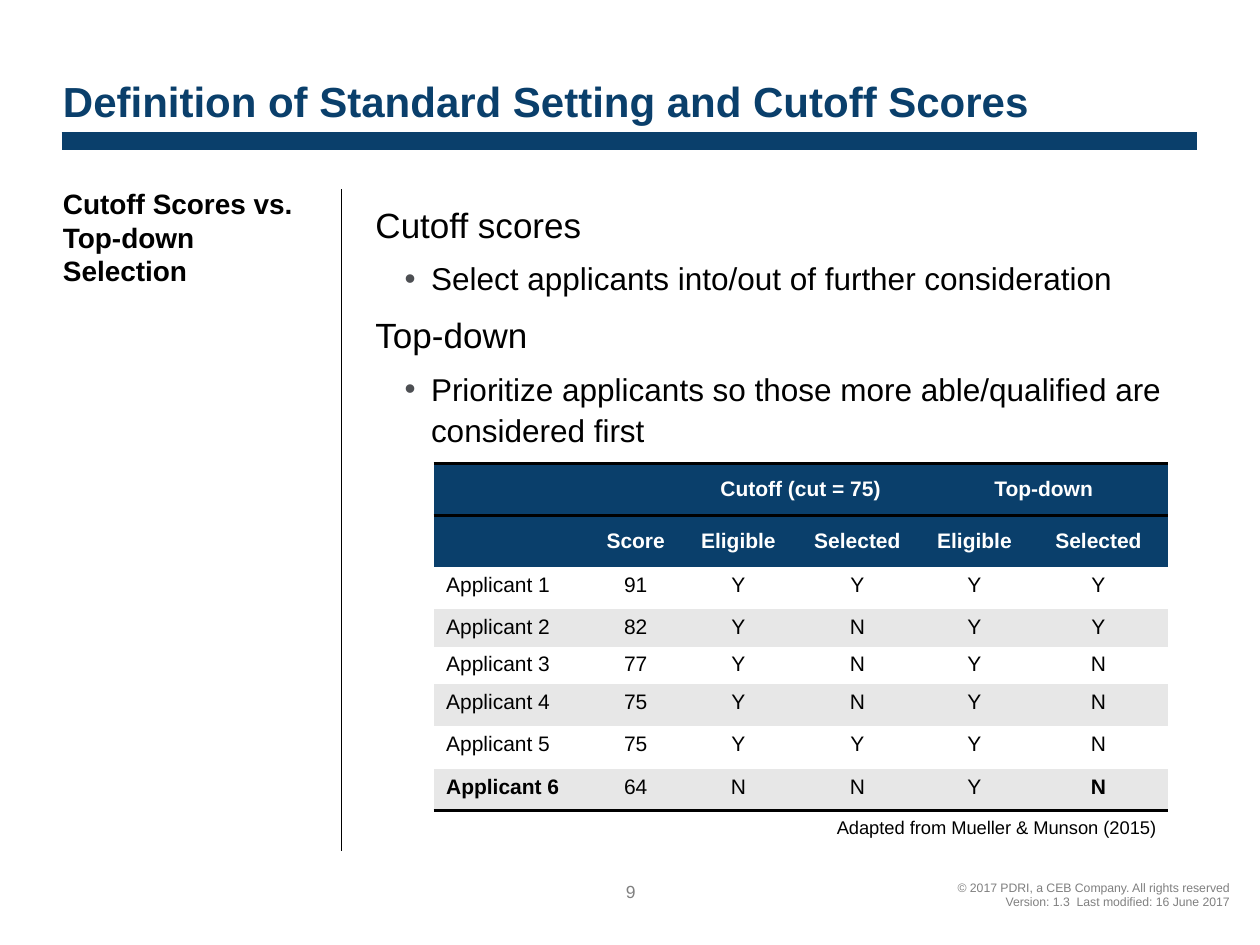
from dataclasses import dataclass

from lxml.etree import SubElement
from pptx import Presentation
from pptx.dml.color import RGBColor
from pptx.enum.shapes import MSO_CONNECTOR as Connector
from pptx.enum.text import MSO_ANCHOR as Anchor, PP_ALIGN as Align
from pptx.oxml.ns import qn
from pptx.util import Cm, Pt


@dataclass(frozen=True)
class Theme:
    font: str = "Arial"
    navy: str = "0A3F6B"
    black: str = "000000"
    white: str = "FFFFFF"
    band: str = "E7E7E7"
    grey: str = "7F7F7F"
    footer_grey: str = "808080"
    bullet: str = "4D4F53"
    title: float = 24
    topic: float = 20
    point: float = 18
    sidebar: float = 16
    cell: float = 12
    source: float = 10.5
    number: float = 10
    footer: float = 7


THEME = Theme()
NO_TABLE_STYLE = "{2D5ABB26-0587-4C30-8999-92F81FD0307C}"

DISCUSSION = [
    ("Cutoff scores", "Select applicants into/out of further consideration"),
    ("Top-down", "Prioritize applicants so those more able/qualified are considered first"),
]
GROUPS = ["", "", "Cutoff (cut = 75)", "", "Top-down", ""]
HEADINGS = ["", "Score", "Eligible", "Selected", "Eligible", "Selected"]
APPLICANTS = [(91, "YYYY"), (82, "YNYY"), (77, "YNYN"),
              (75, "YNYN"), (75, "YYYN"), (64, "NNYN")]
COLUMN_WIDTHS = [3.15, 1.85, 2.29, 2.51, 2.21, 2.79]
ROW_HEIGHTS = [1.04, 1.04, 0.84, 0.69, 0.71, 0.84, 0.86, 0.84]


def apply_format(target, values):
    for name, value in values.items():
        setattr(target, name, value)


def write(paragraph, text, size, color=THEME.black, bold=False, **layout):
    run = paragraph.add_run()
    run.text = text
    apply_format(run.font, {"name": THEME.font, "size": Pt(size), "bold": bold})
    run.font.color.rgb = RGBColor.from_string(color)
    apply_format(paragraph, layout)


def add_frame(slide, left, top, width, height, insets=(0, 0, 0, 0), anchor=Anchor.TOP):
    box = slide.shapes.add_textbox(Cm(left), Cm(top), Cm(width), Cm(height))
    frame = box.text_frame
    apply_format(frame, {"word_wrap": True, "vertical_anchor": anchor})
    sides = ("margin_left", "margin_top", "margin_right", "margin_bottom")
    apply_format(frame, dict(zip(sides, map(Cm, insets))))
    return frame


def add_rule(slide, start, end, color, weight):
    rule = slide.shapes.add_connector(Connector.STRAIGHT, *map(Cm, start + end))
    rule.line.color.rgb = RGBColor.from_string(color)
    rule.line.width = Pt(weight)
    SubElement(rule._element.spPr, qn("a:effectLst"))


def add_bullet(paragraph):
    properties = paragraph._p.get_or_add_pPr()
    apply_indent = {"marL": Cm(1.12), "indent": Cm(-0.53), "lvl": 1}
    for name, value in apply_indent.items():
        properties.set(name, str(value))
    color = SubElement(properties, qn("a:buClr"))
    SubElement(color, qn("a:srgbClr"), val=THEME.bullet)
    SubElement(properties, qn("a:buFont"), typeface=THEME.font)
    SubElement(properties, qn("a:buChar"), char="•")


def add_discussion(slide):
    frame = add_frame(slide, 7.57, 4.01, 16.54, 13.14)
    for index, (topic, point) in enumerate(DISCUSSION):
        heading = frame.add_paragraph() if index else frame.paragraphs[0]
        write(heading, topic, THEME.topic, line_spacing=1.1,
              space_before=Pt(7 if index else 0))
        detail = frame.add_paragraph()
        add_bullet(detail)
        write(detail, point, THEME.point, line_spacing=1.1, space_before=Pt(6))


def add_border(cell, side):
    border = SubElement(cell._tc.get_or_add_tcPr(), qn(f"a:ln{side}"), w=str(Pt(2)))
    fill = SubElement(border, qn("a:solidFill"))
    SubElement(fill, qn("a:srgbClr"), val=THEME.black)


def fill_cell(cell, text, row, column, last_row):
    header = row < 2
    borders = {0: "TB", last_row: "B"}.get(row, "")
    for side in borders:
        add_border(cell, side)
    cell.fill.solid()
    background = THEME.navy if header else (THEME.band if row % 2 else THEME.white)
    cell.fill.fore_color.rgb = RGBColor.from_string(background)
    cell.vertical_anchor = Anchor.MIDDLE if header else Anchor.TOP
    if text:
        write(cell.text_frame.paragraphs[0], text, THEME.cell,
              THEME.white if header else THEME.black,
              header or (row == last_row and column in (0, 5)),
              alignment=Align.CENTER if header or column else Align.LEFT)


def add_comparison(slide):
    records = [GROUPS, HEADINGS] + [
        [f"Applicant {number}", str(score), *decisions]
        for number, (score, decisions) in enumerate(APPLICANTS, 1)
    ]
    frame = slide.shapes.add_table(
        len(records), len(HEADINGS), Cm(8.74), Cm(9.35),
        Cm(sum(COLUMN_WIDTHS)), Cm(sum(ROW_HEIGHTS)))
    table = frame.table
    table._tbl.tblPr.find(qn("a:tableStyleId")).text = NO_TABLE_STYLE
    for column, width in zip(table.columns, COLUMN_WIDTHS):
        column.width = Cm(width)
    for row, height in zip(table.rows, ROW_HEIGHTS):
        row.height = Cm(height)
    for row, record in enumerate(records):
        for column, text in enumerate(record):
            fill_cell(table.cell(row, column), text, row, column, len(records) - 1)
    for column in (2, 4):
        table.cell(0, column).merge(table.cell(0, column + 1))


def add_footer(slide):
    footer = add_frame(slide, 10.82, 17.75, 13.97, 0.58, anchor=Anchor.BOTTOM)
    write(footer.paragraphs[0], "© 2017 PDRI, a CEB Company. All rights reserved",
          THEME.footer, THEME.grey, alignment=Align.RIGHT, line_spacing=Pt(8))
    write(footer.add_paragraph(), "Version: 1.3\u00a0 Last modified: 16 June 2017",
          THEME.footer, THEME.footer_grey, alignment=Align.RIGHT)
    number = add_frame(slide, 12.22, 17.86, 0.99, 0.38)
    write(number.paragraphs[0], "9", THEME.number, THEME.grey,
          alignment=Align.CENTER, line_spacing=Pt(9))


def main():
    deck = Presentation()
    apply_format(deck, {"slide_width": Cm(25.4), "slide_height": Cm(19.05)})
    slide = deck.slides.add_slide(deck.slide_layouts[6])
    add_footer(slide)
    add_rule(slide, (6.88, 3.81), (6.88, 17.15), THEME.black, 0.5)
    add_rule(slide, (1.24, 2.84), (24.13, 2.84), THEME.navy, 10.25)
    sidebar = add_frame(slide, 1.27, 3.76, 4.88, 4.17, (0, 0, 0, 0.13))
    write(sidebar.paragraphs[0], "Cutoff Scores vs. Top-down Selection",
          THEME.sidebar, bold=True)
    add_discussion(slide)
    title = add_frame(slide, 1.27, 1.02, 22.86, 1.65, (0, 0.13, 0.25, 0.13), Anchor.BOTTOM)
    write(title.paragraphs[0], "Definition of Standard Setting and Cutoff Scores",
          THEME.title, THEME.navy, True)
    source = add_frame(slide, 16.87, 16.46, 6.73, 0.46)
    write(source.paragraphs[0], "Adapted from Mueller & Munson (2015)", THEME.source)
    add_comparison(slide)
    deck.save("out.pptx")


if __name__ == "__main__":
    main()
